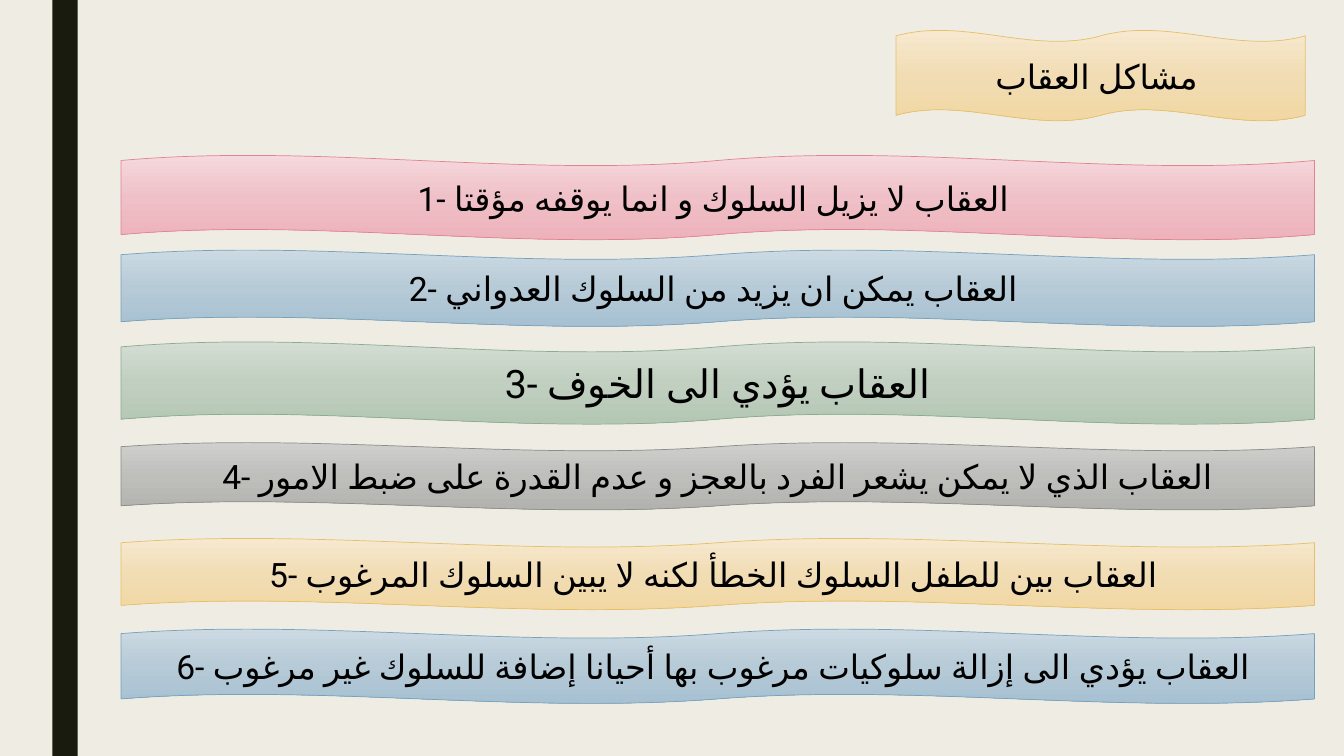
"""Build the slide on the problems of punishment: a title and six wavy banners."""
from copy import deepcopy

from pptx import Presentation
from pptx import util as u
from pptx.dml.color import RGBColor
from pptx.enum import lang, shapes, text
from pptx.oxml.ns import qn

PX = u.Inches(1) // 100
FONT = "Roboto"
COLORS = {"paper": "EFEDE3", "stripe": "191B0E", "ink": "000000"}
GRADIENTS = {
    "gold": ("F7E9D0", "F1DCB4", "F1D7A3"),
    "pink": ("F6D9DD", "EFC0C7", "EEB2BB"),
    "blue": ("CCDAE3", "B6CAD7", "A7C1D2"),
    "green": ("D3DDD3", "C0CFC0", "B4C7B5"),
    "gray": ("CFCFCD", "BEBEBB", "B2B3AF"),
}
OUTLINES = {"gold": "E6C069", "pink": "E28394", "blue": "77A2BB",
            "green": "8DAB8E", "gray": "8C8D86"}
LEFT, WIDTH = 120, 1184
BANNERS = [
    (889, 30, 406, 90, "gold", 24, "مشاكل العقاب "),
    (LEFT, 154, WIDTH, 84, "pink", 24, "1- العقاب لا يزيل السلوك و انما يوقفه مؤقتا "),
    (LEFT, 248, WIDTH, 76, "blue", 24, "2- العقاب يمكن ان يزيد من السلوك العدواني "),
    (LEFT, 339, WIDTH, 82, "green", 28, "3- العقاب يؤدي الى الخوف"),
    (LEFT, 439, WIDTH, 67, "gray", 24,
     "4- العقاب الذي لا يمكن يشعر الفرد بالعجز و عدم القدرة على ضبط الامور"),
    (LEFT, 534, WIDTH, 71, "gold", 24,
     "5- العقاب بين للطفل السلوك الخطأ لكنه لا يبين السلوك المرغوب "),
    (LEFT, 624, WIDTH, 74, "blue", 24,
     "6- العقاب يؤدي الى إزالة سلوكيات مرغوب بها أحيانا إضافة للسلوك غير مرغوب "),
]


def add_part(kind, *box):
    part = slide.shapes.add_shape(kind, *(length * PX for length in box))
    part.shadow.inherit = False
    return part


deck = Presentation()
deck.slide_width, deck.slide_height = u.Inches(40 / 3), u.Inches(7.5)
slide = deck.slides.add_slide(deck.slide_layouts[6])
slide.background.fill.solid()
slide.background.fill.fore_color.rgb = RGBColor.from_string(COLORS["paper"])

stripe = add_part(shapes.MSO_SHAPE.RECTANGLE, 52, 0, 25, 750)
stripe.fill.solid()
stripe.fill.fore_color.rgb = RGBColor.from_string(COLORS["stripe"])
stripe.line.fill.background()

for left, top, width, height, tone, size, wording in BANNERS:
    banner = add_part(shapes.MSO_SHAPE.DOUBLE_WAVE, left, top, width, height)
    banner.fill.gradient()
    banner.fill.gradient_angle = 270
    stop_list = next(banner.element.iter(qn("a:gsLst")))
    stop_list.insert(1, deepcopy(stop_list[0]))
    for stop, position, shade in zip(banner.fill.gradient_stops, (0, 0.5, 1), GRADIENTS[tone]):
        stop.position = position
        stop.color.rgb = RGBColor.from_string(shade)
    banner.line.color.rgb = RGBColor.from_string(OUTLINES[tone])
    banner.line.width = u.Pt(0.5)

    frame = banner.text_frame
    frame.text = wording
    frame.word_wrap = True
    frame.vertical_anchor = text.MSO_ANCHOR.MIDDLE
    sentence = frame.paragraphs[0]
    sentence.alignment = text.PP_ALIGN.CENTER
    words = sentence.runs[0]
    words.font.size = u.Pt(size)
    words.font.name = FONT
    words.font.language_id = lang.MSO_LANGUAGE_ID.ARABIC
    words.font.color.rgb = RGBColor.from_string(COLORS["ink"])

deck.save("out.pptx")
